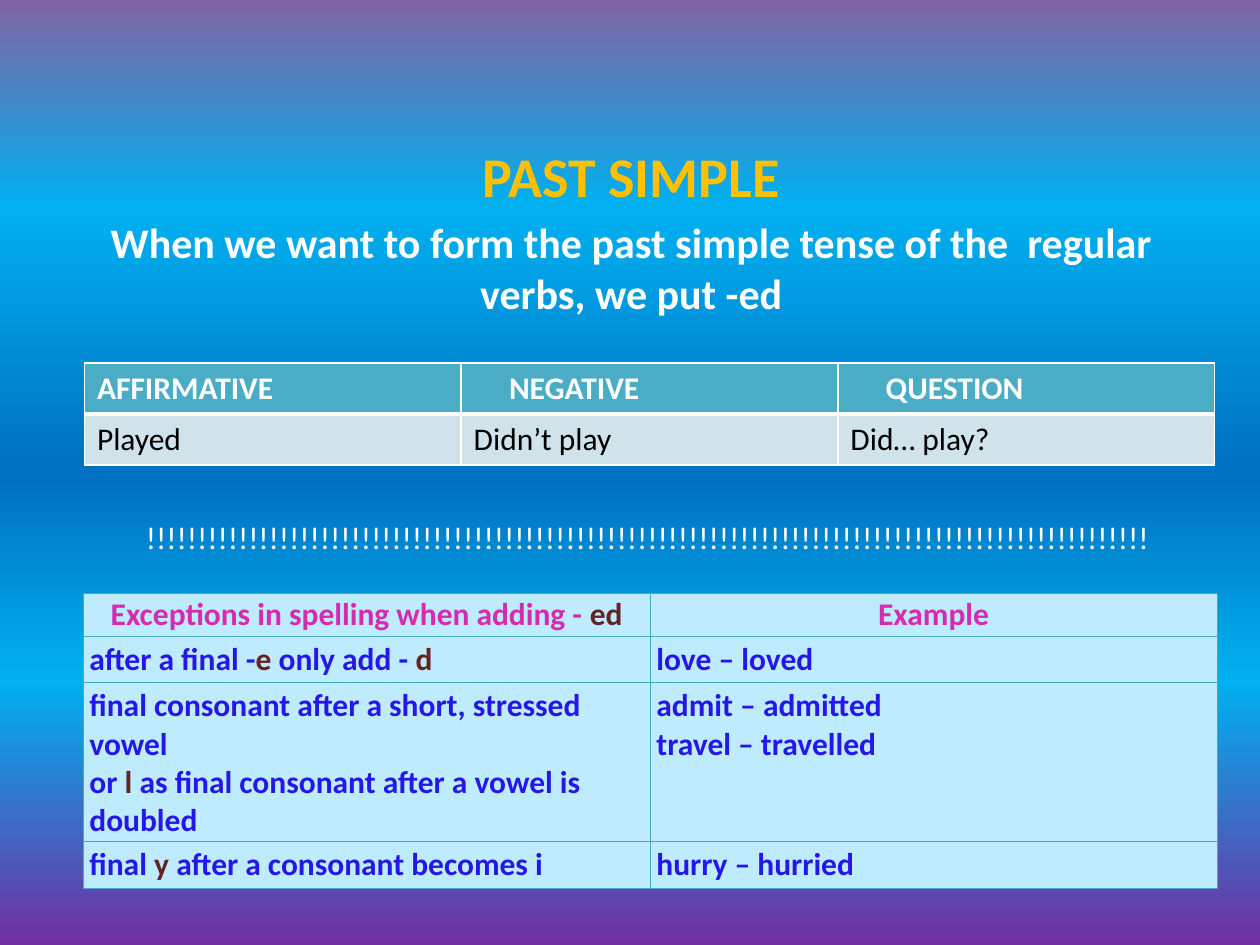
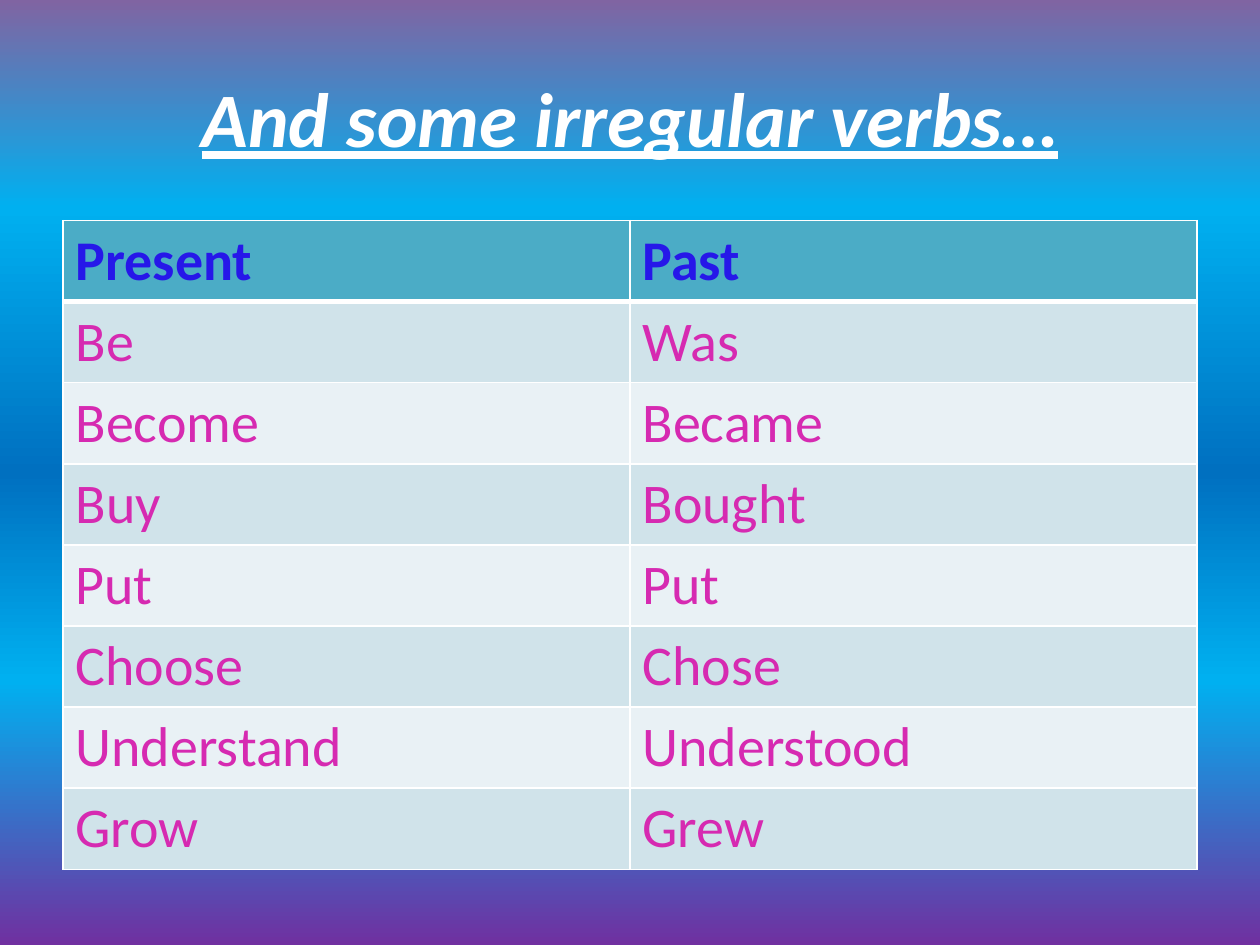
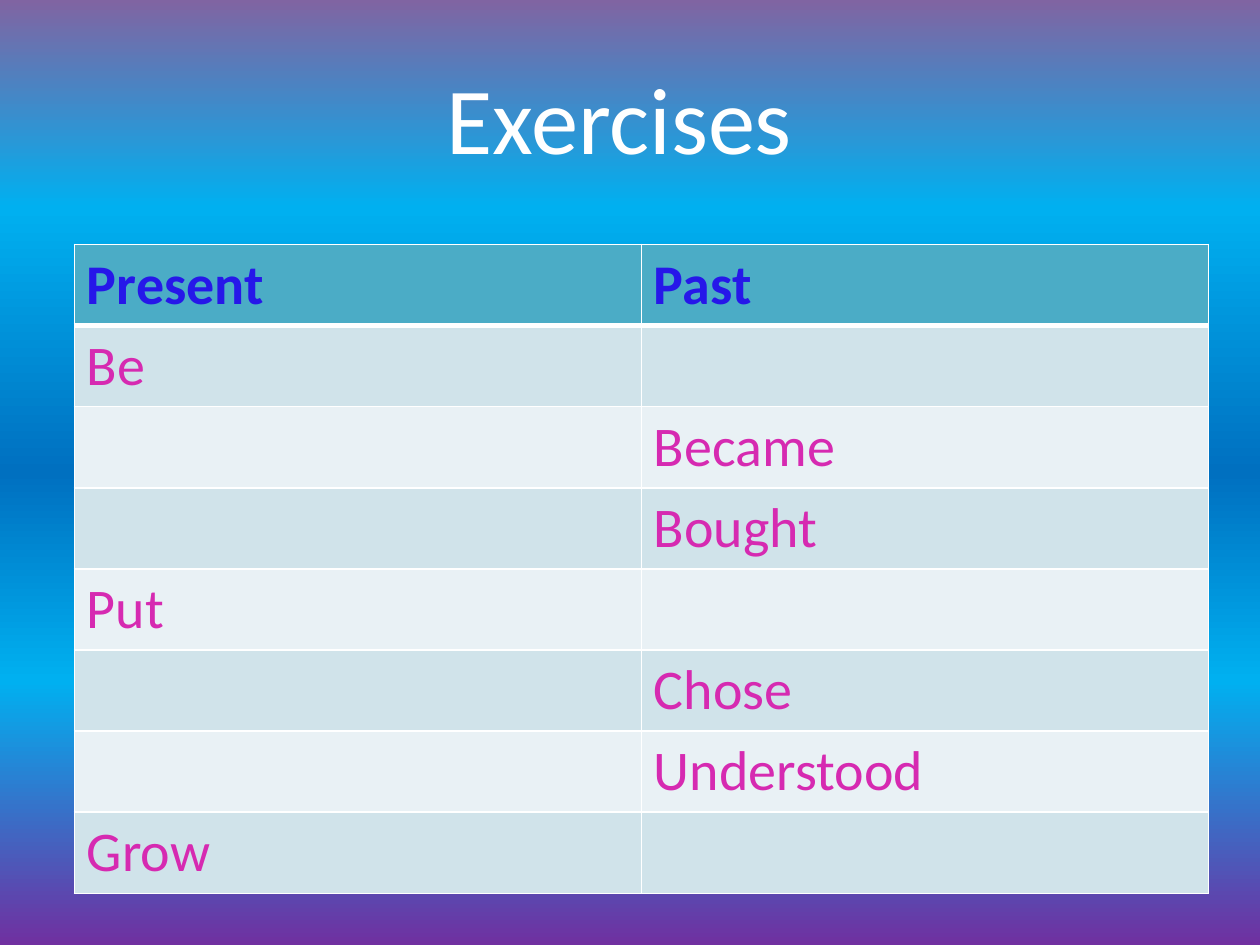
from dataclasses import dataclass

from lxml.etree import SubElement
from pptx import Presentation
from pptx.dml.color import RGBColor
from pptx.enum.text import MSO_ANCHOR as Anchor, MSO_AUTO_SIZE as AutoSize, PP_ALIGN as Align
from pptx.oxml.ns import qn
from pptx.util import Inches, Pt


@dataclass(frozen=True)
class Theme:
    font: str = "Calibri"
    white: str = "FFFFFF"
    black: str = "000000"
    gold: str = "FFC000"
    blue: str = "2617E9"
    pink: str = "D62AB1"
    brown: str = "632523"
    header_fill: str = "4BACC6"
    bands: tuple = ("D0E3EA", "E9F1F5")
    rule_fill: str = "BFEBFF"
    rule_border: str = "46AAC5"
    background: tuple = ((0, "8064A2"), (22, "00B0F0"), (50, "0070C0"),
                         (72, "00B0F0"), (100, "7030A0"))
    small: int = 18
    medium: int = 24
    large: int = 32
    title: int = 44
    big_title: int = 54


THEME = Theme()
BODY_LAYOUT, TITLE_LAYOUT = 1, 5


def write_text(paragraph, text, *, size, color, bold=False, italic=False,
               underline=False, align=None):
    """Write a string, or a list of (string, colour) parts, into a paragraph."""
    if align is not None:
        paragraph.alignment = align
    parts = [(text, color)] if isinstance(text, str) else text
    for part, part_color in parts:
        for index, line in enumerate(part.split("\n")):
            if index:
                paragraph.add_line_break()
            run = paragraph.add_run()
            run.text = line
            font = run.font
            font.name, font.size = THEME.font, Pt(size)
            font.bold, font.italic, font.underline = bold, italic, underline
            font.color.rgb = RGBColor.from_string(part_color)


def add_solid_fill(parent, color):
    fill = SubElement(parent, qn("a:solidFill"))
    SubElement(fill, qn("a:srgbClr"), val=color)


class Deck:
    """Holds the style and the slide being built."""

    def __init__(self, theme):
        self.theme = theme
        self.presentation = Presentation()
        self.presentation.slide_width = Inches(10)
        self.presentation.slide_height = Inches(7.5)
        self.slide = None
        self.set_background()

    def set_background(self):
        master = self.presentation.slide_master
        fill = master.background.fill
        fill.gradient()
        fill.gradient_angle = 270
        stops = master.element.xpath(".//p:bg//a:gsLst")[0]
        for stop in list(stops):
            stops.remove(stop)
        for position, color in self.theme.background:
            stop = SubElement(stops, qn("a:gs"), pos=str(position * 1000))
            SubElement(stop, qn("a:srgbClr"), val=color)

    def new_slide(self, layout):
        layouts = self.presentation.slide_layouts
        self.slide = self.presentation.slides.add_slide(layouts[layout])

    def place(self, shape, left, top, width, height):
        shape.left, shape.top = Inches(left), Inches(top)
        shape.width, shape.height = Inches(width), Inches(height)

    def title(self, text, **text_format):
        shape = self.slide.shapes.title
        self.place(shape, 0.5, 0.3, 9, 1.25)
        shape.text_frame.auto_size = AutoSize.NONE
        write_text(shape.text_frame.paragraphs[0], text,
                   color=self.theme.white, align=Align.CENTER, **text_format)

    def body(self, box, lines):
        heading = self.slide.shapes.title
        heading.element.getparent().remove(heading.element)
        shape = self.slide.placeholders[1]
        self.place(shape, *box)
        frame = shape.text_frame
        frame.auto_size = AutoSize.NONE
        for index, (text, text_format) in enumerate(lines):
            paragraph = frame.add_paragraph() if index else frame.paragraphs[0]
            write_text(paragraph, text, align=Align.CENTER, **text_format)
            properties = paragraph._p.get_or_add_pPr()
            properties.set("marL", "0")
            properties.set("indent", "0")
            SubElement(properties, qn("a:buNone"))

    def text_box(self, box, text, **text_format):
        shape = self.slide.shapes.add_textbox(*map(Inches, box))
        shape.text_frame.word_wrap = True
        write_text(shape.text_frame.paragraphs[0], text, **text_format)

    def table(self, left, top, column_widths, row_heights):
        frame = self.slide.shapes.add_table(
            len(row_heights), len(column_widths), Inches(left), Inches(top),
            Inches(sum(column_widths)), Inches(sum(row_heights)))
        table = frame.table
        table.horz_banding = False
        for column, width in zip(table.columns, column_widths):
            column.width = Inches(width)
        for row, height in zip(table.rows, row_heights):
            row.height = Inches(height)
        return table

    def cell(self, cell, text, *, fill, border, width=1, top=None, bottom=None,
             margins=None, anchor=Anchor.TOP, **text_format):
        properties = cell._tc.get_or_add_tcPr()
        edges = {"lnL": width, "lnR": width, "lnT": top or width, "lnB": bottom or width}
        for edge, points in edges.items():
            line = SubElement(properties, qn(f"a:{edge}"), w=str(Pt(points)))
            add_solid_fill(line, border)
        cell.fill.solid()
        cell.fill.fore_color.rgb = RGBColor.from_string(fill)
        cell.vertical_anchor = anchor
        if margins:
            side, edge = map(Inches, margins)
            cell.margin_left = cell.margin_right = side
            cell.margin_top = cell.margin_bottom = edge
        if text:
            write_text(cell.text_frame.paragraphs[0], text, **text_format)

    def banded_table(self, left, top, column_widths, row_height, rows, *, size,
                     header_color, body_color):
        theme = self.theme
        table = self.table(left, top, column_widths, [row_height] * len(rows))
        for row_index, row in enumerate(rows):
            header = row_index == 0
            for column_index, text in enumerate(row):
                self.cell(table.cell(row_index, column_index), text,
                          fill=theme.header_fill if header else theme.bands[(row_index - 1) % 2],
                          border=theme.white, top=3 if row_index == 1 else 1,
                          bottom=3 if header else 1, size=size, bold=header,
                          color=header_color if header else body_color)
        return table

    def spelling_table(self, left, top, rows):
        theme = self.theme
        table = self.table(left, top, [4.5, 4.5], [0.34, 0.37, 1.26, 0.37])
        for row_index, row in enumerate(rows):
            header = row_index == 0
            for column_index, text in enumerate(row):
                self.cell(table.cell(row_index, column_index), text,
                          fill=theme.rule_fill, border=theme.rule_border, width=0.75,
                          margins=(0.05, 0.02 if header else 0.03),
                          anchor=Anchor.MIDDLE if header else Anchor.TOP,
                          align=Align.CENTER if header else None,
                          size=theme.small, bold=True,
                          color=theme.pink if header else theme.blue)

    def verb_table(self, left, top, verbs):
        self.banded_table(left, top, [4.5, 4.5], 0.64, [("Present", "Past"), *verbs],
                          size=self.theme.large, header_color=self.theme.blue,
                          body_color=self.theme.pink)


def main():
    theme = THEME
    deck = Deck(theme)

    # Past simple rules
    deck.new_slide(BODY_LAYOUT)
    deck.body((0.51, 1.07, 9, 4.95), [
        ("PAST SIMPLE", dict(size=theme.large, color=theme.gold, bold=True)),
        ("When we want to form the past simple tense of the  regular verbs, we put -ed",
         dict(size=theme.medium, color=theme.white, bold=True)),
    ])
    forms = deck.banded_table(
        0.67, 2.88, [2.99] * 3, 0.4,
        [("AFFIRMATIVE", "NEGATIVE", "QUESTION"),
         ("Played", "Didn’t play", "Did… play?")],
        size=theme.small, header_color=theme.white, body_color=theme.black)
    for column in (1, 2):
        forms.cell(0, column).margin_left = Inches(0.38)
    deck.text_box((1.06, 4.06, 8.19, 0.71), "!" * 98, size=theme.small, color=theme.white)
    blue, brown = theme.blue, theme.brown
    deck.spelling_table(0.66, 4.71, [
        ([("Exceptions in spelling when adding - ", theme.pink), ("ed", brown)], "Example"),
        ([("after a final -", blue), ("e ", brown), ("only add - ", blue), ("d", brown)],
         "love – loved"),
        ([("final consonant after a short, stressed vowel\nor ", blue), ("l ", brown),
          ("as final consonant after a vowel is doubled", blue)],
         "admit – admitted\ntravel – travelled"),
        ([("final ", blue), ("y ", brown), ("after a consonant becomes i", blue)],
         "hurry – hurried"),
    ])

    # Irregular verbs
    verbs = [("Be", "Was"), ("Become", "Became"), ("Buy", "Bought"), ("Put", "Put"),
             ("Choose", "Chose"), ("Understand", "Understood"), ("Grow", "Grew")]
    deck.new_slide(TITLE_LAYOUT)
    deck.title("And some irregular verbs…", size=theme.title,
               bold=True, italic=True, underline=True)
    deck.verb_table(0.5, 1.75, verbs)

    # Exercise: one form of each verb is left blank
    present_given = {"Be", "Put", "Grow"}
    exercise = [(present, "") if present in present_given else ("", past)
                for present, past in verbs]
    deck.new_slide(TITLE_LAYOUT)
    deck.title("Exercises ", size=theme.big_title)
    deck.verb_table(0.59, 1.94, exercise)

    deck.presentation.save("out.pptx")


if __name__ == "__main__":
    main()
